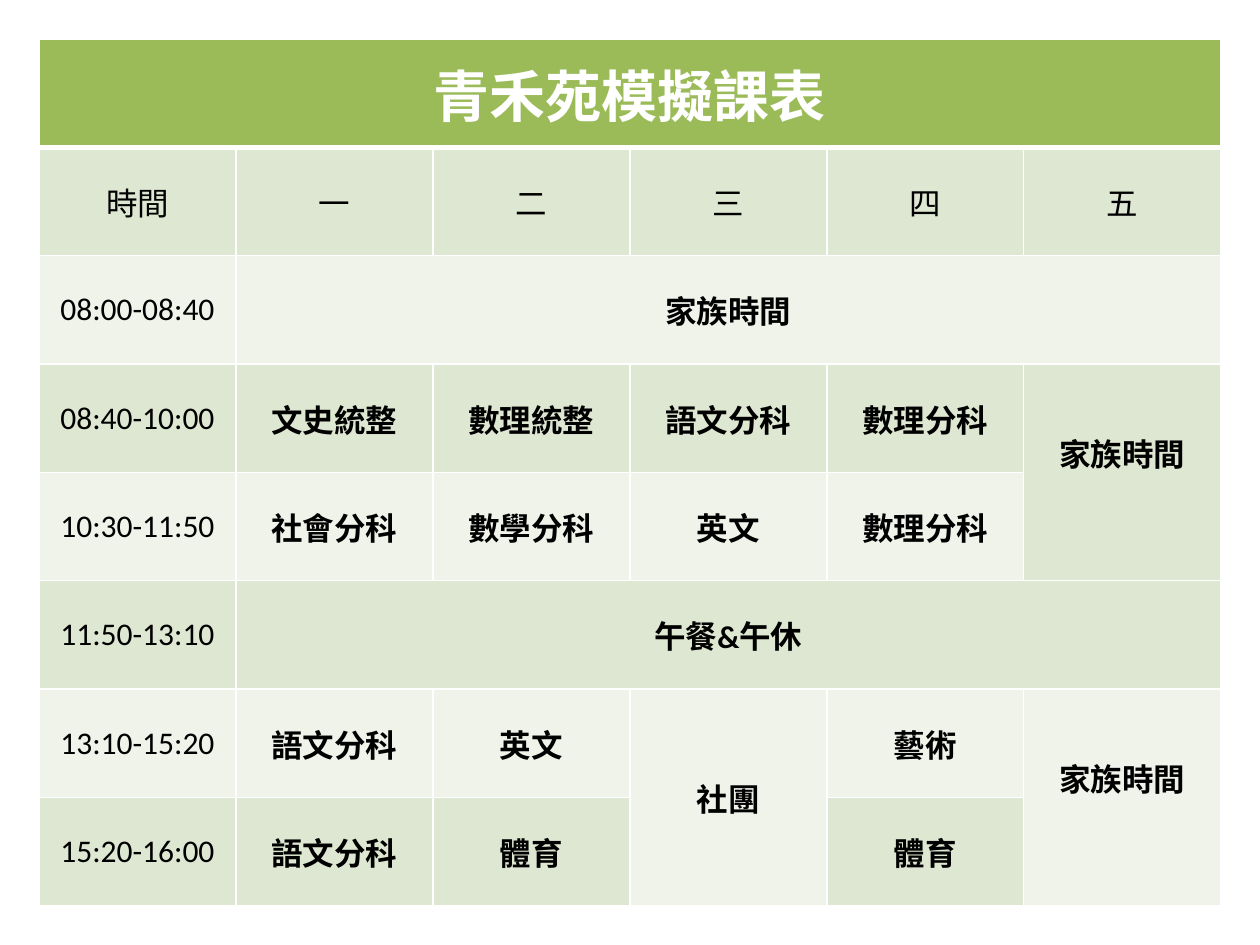
import dataclasses

import pptx
import pptx.dml.color
import pptx.enum.text
import pptx.oxml
import pptx.oxml.ns
import pptx.table
import pptx.util

Inches = pptx.util.Inches
Pt = pptx.util.Pt

WHITE, BLACK = "FFFFFF", "000000"
GREEN, PALE, LIGHT = "9BBB59", "DEE7D1", "EFF3EA"


@dataclasses.dataclass
class Entry:
    row: int
    col: int
    text: str
    down: int = 1
    wide: int = 1
    size: int = 18
    color: str = BLACK
    bold: bool = True
    side: float = 0.1
    top: float = 0.05
    base: float = 0.05


def rgb(code: str) -> pptx.dml.color.RGBColor:
    return pptx.dml.color.RGBColor.from_string(code)


def edge(cell: pptx.table._Cell, tag: str, width: float) -> None:
    space = pptx.oxml.ns.nsdecls("a")
    cell._tc.get_or_add_tcPr().append(pptx.oxml.parse_xml(
        f'<a:{tag} {space} w="{Pt(width)}"><a:solidFill>'
        f'<a:srgbClr val="{WHITE}"/></a:solidFill></a:{tag}>'
    ))


def style(cell: pptx.table._Cell, row: int) -> None:
    edge(cell, "lnL", 1)
    edge(cell, "lnR", 1)
    edge(cell, "lnT", 3 if row == 1 else 1)
    edge(cell, "lnB", 3 if row == 0 else 1)
    cell.fill.solid()
    shade = GREEN if row == 0 else PALE if row % 2 else LIGHT
    cell.fill.fore_color.rgb = rgb(shade)


def write(table: pptx.table.Table, entry: Entry) -> None:
    cell = table.cell(entry.row, entry.col)
    if entry.down > 1 or entry.wide > 1:
        cell.merge(table.cell(entry.row + entry.down - 1, entry.col + entry.wide - 1))
    cell.vertical_anchor = pptx.enum.text.MSO_ANCHOR.MIDDLE
    cell.margin_left = cell.margin_right = Inches(entry.side)
    cell.margin_top, cell.margin_bottom = Inches(entry.top), Inches(entry.base)
    para = cell.text_frame.paragraphs[0]
    para.text = entry.text
    para.alignment = pptx.enum.text.PP_ALIGN.CENTER
    para.font.name = "Calibri"
    para.font.size = Pt(entry.size)
    para.font.bold = entry.bold
    para.font.color.rgb = rgb(entry.color)


DAYS = ["時間", "一", "二", "三", "四", "五"]
TIMES = ["08:00-08:40", "08:40-10:00", "10:30-11:50",
         "11:50-13:10", "13:10-15:20", "15:20-16:00"]
LESSONS = {
    3: ["文史統整", "數理統整", "語文分科", "數理分科"],
    4: ["社會分科", "數學分科", "英文", "數理分科"],
    6: ["語文分科", "英文", "", "藝術"],
    7: ["語文分科", "體育", "", "體育"],
}
ENTRIES = [
    Entry(0, 0, "青禾苑模擬課表", wide=6, size=32, color=WHITE),
    *[Entry(1, col, day, bold=False) for col, day in enumerate(DAYS)],
    *[Entry(row, 0, time, bold=False, side=0.07, top=0, base=0)
      for row, time in enumerate(TIMES, 2)],
    *[Entry(row, col, name) for row, names in LESSONS.items()
      for col, name in enumerate(names, 1) if name],
    Entry(2, 1, "家族時間", wide=5),
    Entry(5, 1, "午餐&午休", wide=5),
    Entry(6, 3, "社團", down=2),
    *[Entry(row, 5, "家族時間", down=2, base=0.36) for row in (3, 6)],
]


def main() -> None:
    deck = pptx.Presentation()
    deck.slide_width, deck.slide_height = Inches(10), Inches(7.5)
    slide = deck.slides.add_slide(deck.slide_layouts[6])
    table = slide.shapes.add_table(
        8, 6, Inches(0.31), Inches(0.31), Inches(9.38), Inches(6.88)
    ).table
    for row in range(8):
        for col in range(6):
            style(table.cell(row, col), row)
    for entry in ENTRIES:
        write(table, entry)
    deck.save("out.pptx")


if __name__ == "__main__":
    main()
